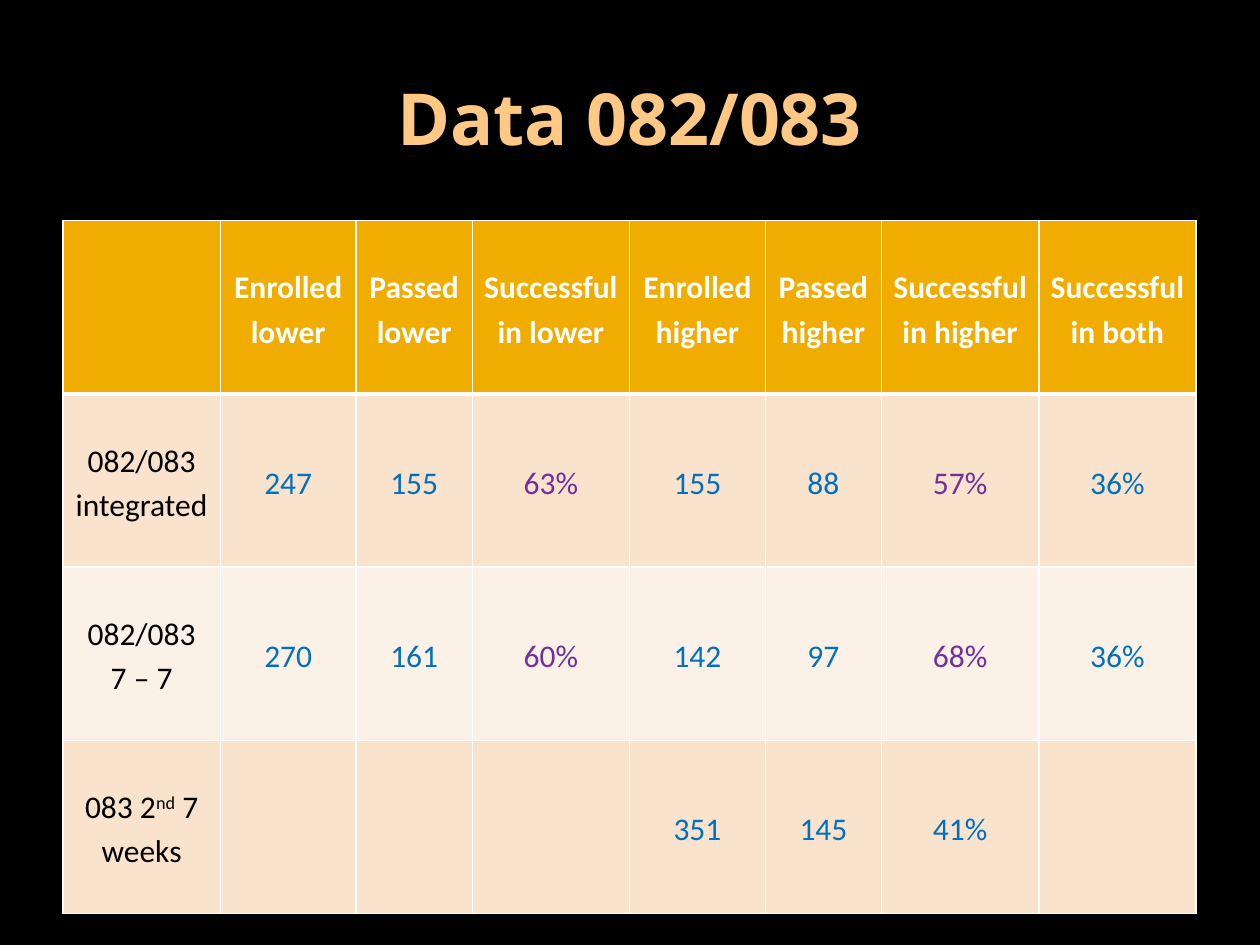
from lxml.etree import SubElement
from pptx import Presentation
from pptx.dml.color import RGBColor
from pptx.enum.text import MSO_ANCHOR, PP_ALIGN
from pptx.oxml.ns import qn
from pptx.util import Cm, Pt

BLACK = RGBColor(0x00, 0x00, 0x00)
WHITE = RGBColor(0xFF, 0xFF, 0xFF)
PEACH = RGBColor(0xFF, 0xC9, 0x85)
GOLD = RGBColor(0xF0, 0xAD, 0x00)
SAND = RGBColor(0xF9, 0xE3, 0xCC)
CREAM = RGBColor(0xFC, 0xF1, 0xE7)
BLUE = RGBColor(0x00, 0x70, 0xC0)
PURPLE = RGBColor(0x70, 0x30, 0xA0)

HEADS = ["", "Enrolled lower", "Passed lower", "Successful in lower",
         "Enrolled higher", "Passed higher", "Successful in higher",
         "Successful in both"]
ROWS = [
    ["082/083\vintegrated", "247", "155", "63%", "155", "88", "57%", "36%"],
    ["082/083\v7 – 7", "270", "161", "60%", "142", "97", "68%", "36%"],
    ["083 2^nd^ 7 weeks", "", "", "", "351", "145", "41%", ""],
]
WIDTHS = [3.17, 2.74, 2.34, 3.17, 2.74, 2.34, 3.17, 3.17]
RATES = (3, 6)  # columns whose rates stand out in the two full rows


def add_title(slide, text, left, top, width, height):
    title = slide.shapes.title
    title.left, title.top = Cm(left), Cm(top)
    title.width, title.height = Cm(width), Cm(height)
    frame = title.text_frame
    frame.text = text
    frame.vertical_anchor = MSO_ANCHOR.MIDDLE
    para = frame.paragraphs[0]
    para.alignment = PP_ALIGN.CENTER
    font = para.font
    font.name, font.size, font.bold = "Open Sans", Pt(41), True
    font.color.rgb = PEACH


def set_edges(cell, top, bottom):
    """Draw white cell borders; top and bottom are widths in points."""
    props = cell._tc.get_or_add_tcPr()
    for side, width in (("L", 1), ("R", 1), ("T", top), ("B", bottom)):
        line = SubElement(props, qn(f"a:ln{side}"), w=str(Pt(width)))
        fill = SubElement(line, qn("a:solidFill"))
        SubElement(fill, qn("a:srgbClr"), val=str(WHITE))


def fill_cell(cell, text, ink, back, bold):
    """Write the text; parts between carets are raised."""
    cell.fill.solid()
    cell.fill.fore_color.rgb = back
    cell.vertical_anchor = MSO_ANCHOR.MIDDLE
    cell.margin_left = cell.margin_right = Cm(0.18)
    cell.margin_top = cell.margin_bottom = 0
    para = cell.text_frame.paragraphs[0]
    if "^" in text:
        for num, part in enumerate(text.split("^")):
            run = para.add_run()
            run.text = part
            if num % 2:
                run._r.get_or_add_rPr().set("baseline", "30000")
    else:
        para.text = text
    para.alignment = PP_ALIGN.CENTER
    para.line_spacing = 1.15
    font = para.font
    font.name, font.size, font.bold = "Calibri", Pt(18), bold
    font.color.rgb = ink


def pick_ink(row, col):
    if row == 0:
        return WHITE
    if col == 0:
        return BLACK
    return PURPLE if col in RATES and row < 3 else BLUE


def add_grid(slide, left, top, width, height):
    data = [HEADS] + ROWS
    table = slide.shapes.add_table(len(data), len(HEADS), Cm(left), Cm(top),
                                   Cm(width), Cm(height)).table
    for column, size in zip(table.columns, WIDTHS):
        column.width = Cm(size)
    for row, texts in enumerate(data):
        back = GOLD if row == 0 else SAND if row % 2 else CREAM
        for col, text in enumerate(texts):
            cell = table.cell(row, col)
            set_edges(cell, 3 if row == 1 else 1, 3 if row == 0 else 1)
            fill_cell(cell, text, pick_ink(row, col), back, row == 0)


def main():
    deck = Presentation()
    deck.slide_width, deck.slide_height = Cm(25.4), Cm(19.05)
    slide = deck.slides.add_slide(deck.slide_layouts[5])
    slide.background.fill.solid()
    slide.background.fill.fore_color.rgb = BLACK
    add_title(slide, "Data 082/083", 1.27, 0.76, 22.86, 3.18)
    add_grid(slide, 1.27, 4.45, 22.86, 13.97)
    deck.save("out.pptx")


if __name__ == "__main__":
    main()
